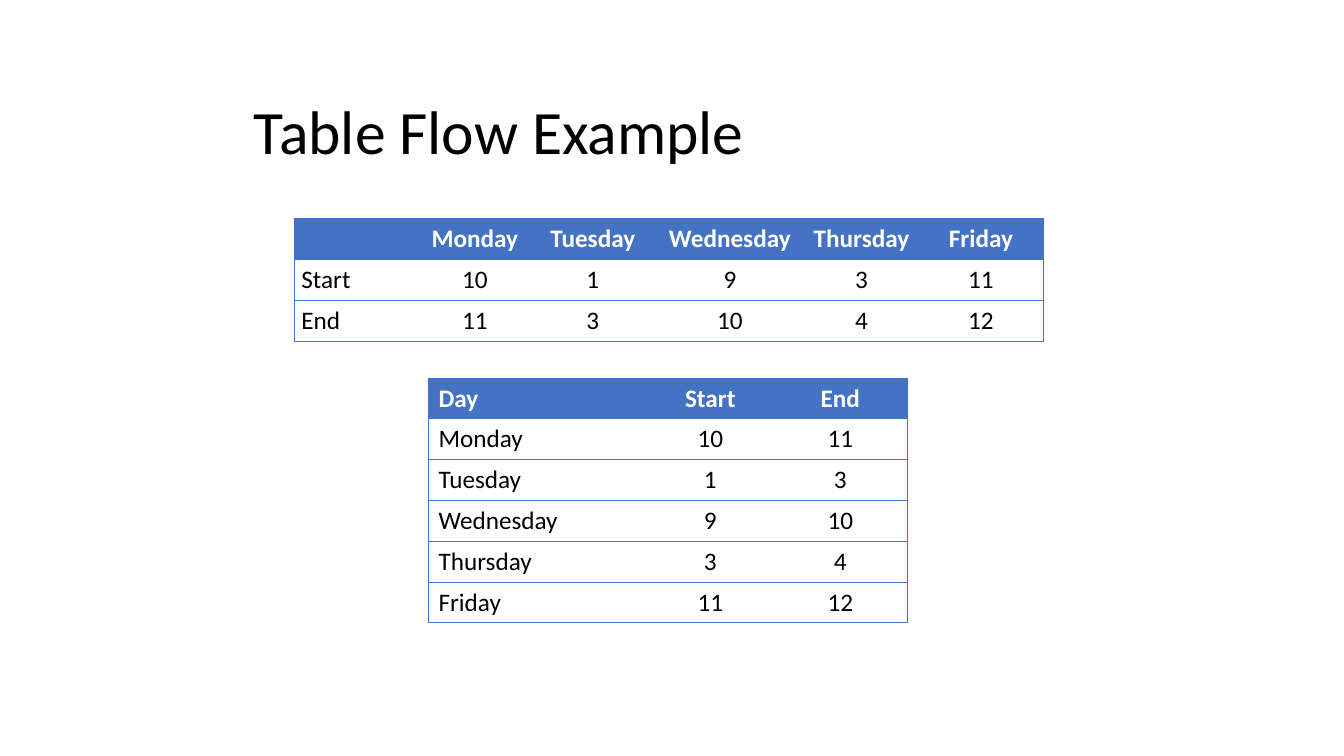
from dataclasses import dataclass

from lxml import etree
from pptx import Presentation
from pptx.dml.color import RGBColor
from pptx.enum.text import MSO_ANCHOR, PP_ALIGN
from pptx.oxml.ns import qn
from pptx.slide import Slide
from pptx.table import _Cell
from pptx.text.text import TextFrame
from pptx.util import Inches, Pt

LEFT, CENTER = PP_ALIGN.LEFT, PP_ALIGN.CENTER
MIDDLE = MSO_ANCHOR.MIDDLE


@dataclass(frozen=True)
class Theme:
    font: str = "Calibri"
    title_size: int = 44
    table_size: int = 18
    text: str = "000000"
    header_text: str = "FFFFFF"
    accent: str = "4472C4"
    border: float = 0.5


@dataclass(frozen=True)
class Schedule:
    left: float
    top: float
    height: float
    widths: list[float]
    rows: list[list[str]]
    side_margin: float


THEME = Theme()

DAY_TIMES = [
    ["Monday", "10", "11"],
    ["Tuesday", "1", "3"],
    ["Wednesday", "9", "10"],
    ["Thursday", "3", "4"],
    ["Friday", "11", "12"],
]
DAYS, STARTS, ENDS = (list(column) for column in zip(*DAY_TIMES))

SCHEDULES = [
    Schedule(2.92, 2.17, 1.22, [1.24, 1.1, 1.24, 1.48, 1.13, 1.24],
             [["", *DAYS], ["Start", *STARTS], ["End", *ENDS]], 0.07),
    Schedule(4.25, 3.75, 2.43, [2.17, 1.25, 1.33],
             [["Day", "Start", "End"], *DAY_TIMES], 0.1),
]


def write(tf: TextFrame, text: str, *, size: int, color: str = THEME.text,
          bold: bool = False, align: PP_ALIGN = LEFT,
          spacing: float = 1.0) -> None:
    p = tf.paragraphs[0]
    p.alignment = align
    p.line_spacing = spacing
    p.font.size = Pt(size)
    if not text:
        return
    r = p.add_run()
    r.text = text
    r.font.name = THEME.font
    r.font.size = Pt(size)
    r.font.bold = bold
    r.font.color.rgb = RGBColor.from_string(color)


def set_borders(cell: _Cell, visible: dict[str, bool]) -> None:
    tc_pr = cell._tc.get_or_add_tcPr()
    for side, shown in visible.items():
        ln = etree.SubElement(tc_pr, qn(f"a:ln{side}"), w=str(Pt(THEME.border)))
        if shown:
            fill = etree.SubElement(ln, qn("a:solidFill"))
            etree.SubElement(fill, qn("a:srgbClr"), val=THEME.accent)
        else:
            etree.SubElement(ln, qn("a:noFill"))


def add_title(s: Slide, text: str) -> None:
    box = s.shapes.add_textbox(Inches(2.42), Inches(0.67), Inches(8.5), Inches(1.32))
    tf = box.text_frame
    tf.word_wrap = True
    tf.vertical_anchor = MIDDLE
    write(tf, text, size=THEME.title_size, spacing=0.9)


def add_schedule(s: Slide, schedule: Schedule) -> None:
    last = len(schedule.widths) - 1
    table = s.shapes.add_table(
        len(schedule.rows), len(schedule.widths), Inches(schedule.left),
        Inches(schedule.top), Inches(sum(schedule.widths)),
        Inches(schedule.height)).table
    table.horz_banding = False
    for column, width in zip(table.columns, schedule.widths):
        column.width = Inches(width)
    for i, row in enumerate(schedule.rows):
        header = i == 0
        for j, text in enumerate(row):
            cell = table.cell(i, j)
            cell.margin_left = cell.margin_right = Inches(schedule.side_margin)
            set_borders(cell, {"L": j == 0, "R": j == last, "T": True, "B": True})
            if header:
                cell.fill.solid()
                cell.fill.fore_color.rgb = RGBColor.from_string(THEME.accent)
            else:
                cell.fill.background()
            write(cell.text_frame, text, size=THEME.table_size, bold=header,
                  color=THEME.header_text if header else THEME.text,
                  align=CENTER if j else LEFT)


def main() -> None:
    prs = Presentation()
    prs.slide_width, prs.slide_height = Inches(13.33), Inches(7.5)
    s = prs.slides.add_slide(prs.slide_layouts[6])
    add_title(s, "Table Flow Example")
    for schedule in SCHEDULES:
        add_schedule(s, schedule)
    prs.save("out.pptx")


if __name__ == "__main__":
    main()
